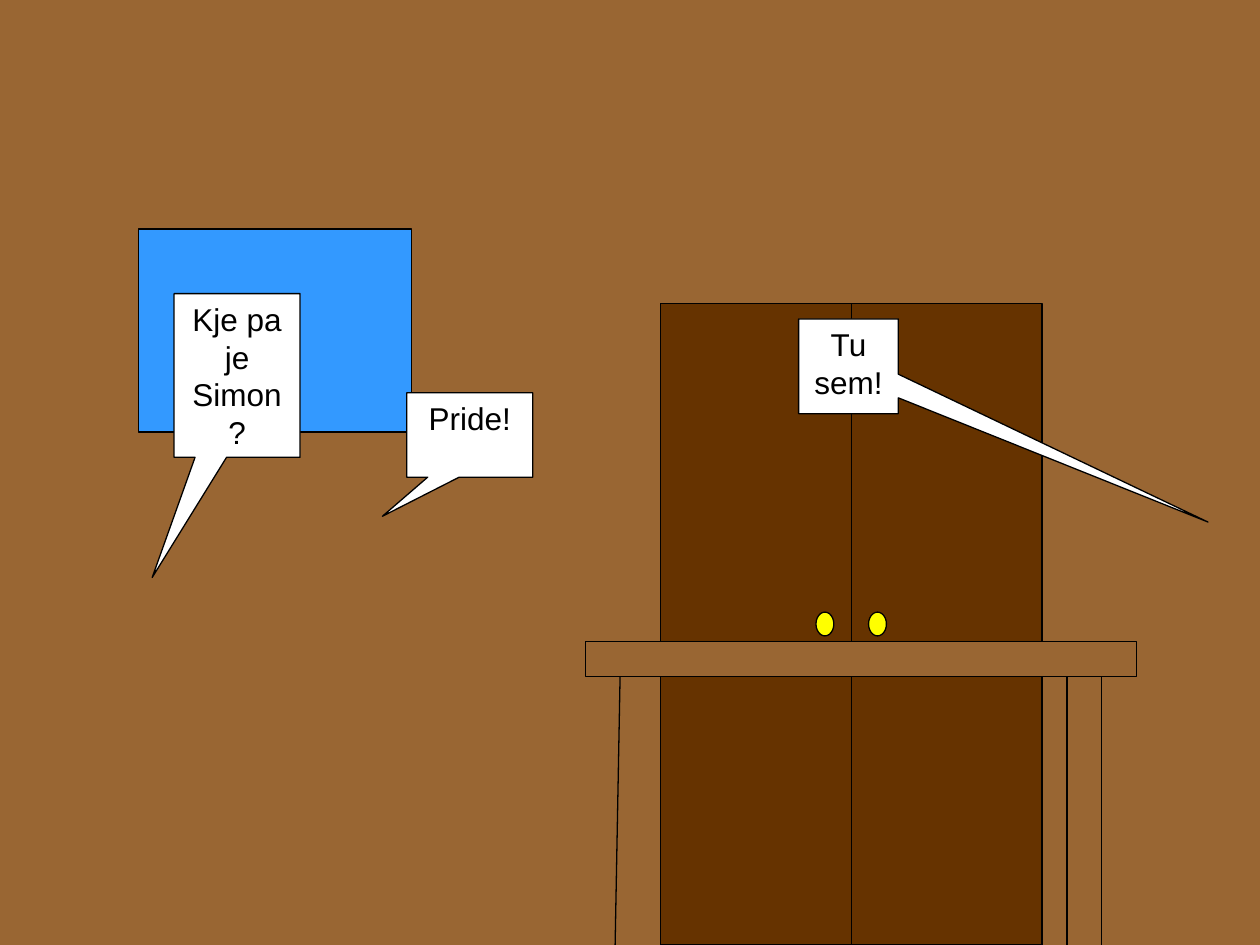
from pptx import Presentation
from pptx.dml.color import RGBColor
from pptx.enum.shapes import MSO_CONNECTOR as Connector, MSO_SHAPE as Shape
from pptx.enum.text import MSO_ANCHOR as Anchor, PP_ALIGN as Align
from pptx.oxml.ns import qn
from pptx.util import Cm, Pt
from lxml.etree import SubElement

WIDTH, HEIGHT = 25.4, 19.05
THEME = {
    "wall": "996633", "wardrobe": "663300", "knob": "FFFF00", "window": "3399FF",
    "bubble": "FFFFFF", "ink": "000000", "font": "Arial", "text": 18, "line": 0.75,
}

WINDOW = (2.79, 4.62, 5.51, 4.09)
WARDROBE = (13.31, 6.12, 7.7, 12.93)
KNOB_SIZE, KNOB_TOP, KNOB_OFFSET = (0.36, 0.48), 12.34, 0.53
TABLE_TOP = (11.81, 12.93, 11.1, 0.71)
TABLE_LEGS = [(12.5, 12.4), (13.31, 13.31), (21.51, 21.51), (22.2, 22.2)]
BUBBLES = [
    ("Kje pa je Simon?", (3.51, 5.92, 2.54, 3.3), (-0.674, 1.234)),
    ("Pride!", (8.2, 7.92, 2.54, 1.7), (-0.693, 0.964)),
    ("Tu sem!", (16.1, 6.43, 2.01, 1.91), (3.606, 1.644)),
]


def color(name):
    """Return the theme colour with this name."""
    return RGBColor.from_string(THEME[name])


def outline(item):
    """Give a shape or line the common thin outline."""
    item.line.color.rgb = color("ink")
    item.line.width = Pt(THEME["line"])


def add_part(shapes, kind, frame, fill):
    """Add a filled and outlined preset shape."""
    part = shapes.add_shape(kind, *map(Cm, frame))
    part.shadow.inherit = False
    part.fill.solid()
    part.fill.fore_color.rgb = color(fill)
    outline(part)
    return part


def add_line(shapes, *ends):
    """Add a straight line without a shadow."""
    line = shapes.add_connector(Connector.STRAIGHT, *map(Cm, ends))
    outline(line)
    SubElement(line._element.spPr, qn("a:effectLst"))


def add_wardrobe(shapes):
    """Draw the wardrobe with its door gap and two knobs."""
    left, top, width, height = WARDROBE
    middle = left + width / 2
    add_part(shapes, Shape.RECTANGLE, WARDROBE, "wardrobe")
    add_line(shapes, middle, top, middle, top + height)
    for side in (-1, 1):
        knob_left = middle + side * KNOB_OFFSET - KNOB_SIZE[0] / 2
        add_part(shapes, Shape.OVAL, (knob_left, KNOB_TOP, *KNOB_SIZE), "knob")


def add_table_front(shapes):
    """Draw the table legs and the board above them."""
    underside = TABLE_TOP[1] + TABLE_TOP[3]
    for upper, lower in TABLE_LEGS:
        add_line(shapes, upper, underside, lower, HEIGHT)
    add_part(shapes, Shape.RECTANGLE, TABLE_TOP, "wall")


def add_bubble(shapes, text, frame, tip):
    """Draw a speech bubble whose tail ends at the tip."""
    bubble = add_part(shapes, Shape.RECTANGULAR_CALLOUT, frame, "bubble")
    bubble.adjustments[0], bubble.adjustments[1] = tip
    box = bubble.text_frame
    box.word_wrap = True
    box.vertical_anchor = Anchor.TOP
    para = box.paragraphs[0]
    para.text = text
    para.alignment = Align.CENTER
    para.font.name = THEME["font"]
    para.font.size = Pt(THEME["text"])
    para.font.color.rgb = color("ink")


def main():
    """Build the room scene and save it."""
    deck = Presentation()
    deck.slide_width, deck.slide_height = Cm(WIDTH), Cm(HEIGHT)
    page = deck.slides.add_slide(deck.slide_layouts[6])
    page.background.fill.solid()
    page.background.fill.fore_color.rgb = color("wall")
    add_wardrobe(page.shapes.add_group_shape().shapes)
    add_part(page.shapes, Shape.RECTANGLE, WINDOW, "window")
    for bubble in BUBBLES:
        add_bubble(page.shapes, *bubble)
    add_table_front(page.shapes.add_group_shape().shapes)
    deck.save("out.pptx")


if __name__ == "__main__":
    main()
